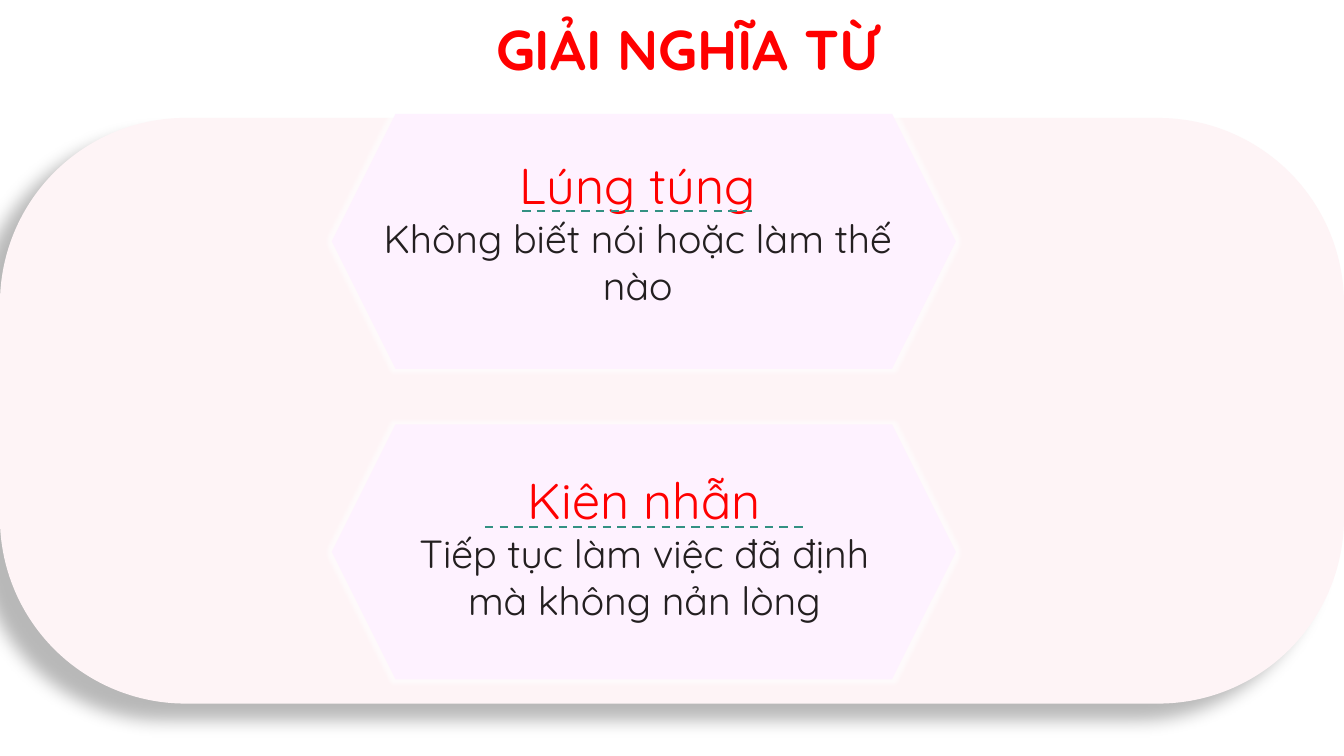
from dataclasses import dataclass

from lxml import etree
from pptx import Presentation
from pptx.dml.color import RGBColor
from pptx.enum import dml, shapes, text
from pptx.oxml.ns import qn
from pptx.util import Inches, Pt

COLORS = {
    "heading": "FF0000",
    "body": "231F20",
    "panel": "FEF4F6",
    "card": "FEF2FF",
    "rule": "339183",
    "shadow": "000000",
    "glow": "FFFFFF",
}
FONT = "Quicksand"
CARD_LEFT, CARD_WIDTH, CARD_HEIGHT = 3.29, 6.19, 2.53


@dataclass
class Definition:
    word: str
    meaning: str
    card_top: float
    text_box: tuple[float, float, float, float]
    rule_start: float
    rule_end: float
    rule_y: float


DEFINITIONS = [
    Definition("Lúng túng", "Không biết nói hoặc làm thế nào", 1.13,
               (3.67, 1.48, 5.31, 1.65), 5.18, 7.49, 2.09),
    Definition("Kiên nhẫn", "Tiếp tục làm việc đã định mà không nản lòng", 4.21,
               (3.88, 4.6, 5.02, 2.12), 4.81, 7.99, 5.23),
]


def rgb(name: str) -> RGBColor:
    return RGBColor.from_string(COLORS[name])


def write(paragraph, content: str, *, size: float, color: str,
          bold: bool = False, align=text.PP_ALIGN.CENTER) -> None:
    paragraph.alignment = align
    run = paragraph.add_run()
    run.text = content
    run.font.name = FONT
    run.font.size = Pt(size)
    run.font.bold = bold
    run.font.color.rgb = rgb(color)


def fit_frame(frame) -> None:
    frame.word_wrap = True
    frame.auto_size = text.MSO_AUTO_SIZE.SHAPE_TO_FIT_TEXT
    frame.vertical_anchor = text.MSO_ANCHOR.TOP


def add_effect(shape, kind: str, color: str, opacity: int, **attributes) -> None:
    """Put one effect, such as outerShdw or glow, in the shape's effect list."""
    shape.shadow.inherit = False
    effects = shape.element.spPr.find(qn("a:effectLst"))
    effect = etree.SubElement(effects, qn(f"a:{kind}"),
                              {key: str(value) for key, value in attributes.items()})
    tint = etree.SubElement(effect, qn("a:srgbClr"), val=COLORS[color])
    etree.SubElement(tint, qn("a:alpha"), val=str(opacity * 1000))


def add_filled(parent, preset, box: tuple[float, float, float, float], color: str):
    shape = parent.add_shape(preset, *map(Inches, box))
    shape.fill.solid()
    shape.fill.fore_color.rgb = rgb(color)
    shape.line.fill.background()
    return shape


def add_title(slide) -> None:
    title = slide.shapes.title
    title.left, title.top, title.width, title.height = map(Inches, (4.82, 0.09, 7.11, 0.77))
    fit_frame(title.text_frame)
    write(title.text_frame.paragraphs[0], "GIẢI NGHĨA TỪ", size=40,
          color="heading", bold=True, align=text.PP_ALIGN.LEFT)


def add_panel(slide) -> None:
    panel = add_filled(slide.shapes, shapes.MSO_SHAPE.ROUNDED_RECTANGLE,
                       (0, 1.17, 13.33, 5.81), "panel")
    panel.adjustments[0] = 0.317
    add_effect(panel, "outerShdw", "shadow", 28, blurRad=Pt(11.8), dist=Pt(19.7),
               dir=141 * 60000, algn="ctr", rotWithShape=0)


def add_definition(slide, definition: Definition) -> None:
    group = slide.shapes.add_group_shape().shapes
    card = add_filled(group, shapes.MSO_SHAPE.HEXAGON,
                      (CARD_LEFT, definition.card_top, CARD_WIDTH, CARD_HEIGHT), "card")
    add_effect(card, "glow", "glow", 60, rad=Pt(5))

    frame = group.add_textbox(*map(Inches, definition.text_box)).text_frame
    fit_frame(frame)
    write(frame.paragraphs[0], definition.word, size=36, color="heading")
    write(frame.add_paragraph(), definition.meaning, size=28, color="body")

    y = Inches(definition.rule_y)
    rule = group.add_connector(shapes.MSO_CONNECTOR.STRAIGHT,
                               Inches(definition.rule_start), y,
                               Inches(definition.rule_end), y)
    rule.line.color.rgb = rgb("rule")
    rule.line.width = Pt(1.5)
    rule.line.dash_style = dml.MSO_LINE.DASH
    etree.SubElement(rule.element.spPr, qn("a:effectLst"))


def main() -> None:
    deck = Presentation()
    deck.slide_width, deck.slide_height = Inches(13.33), Inches(7.5)
    slide = deck.slides.add_slide(deck.slide_layouts.get_by_name("Title Only"))
    add_title(slide)
    add_panel(slide)
    for definition in DEFINITIONS:
        add_definition(slide, definition)
    deck.save("out.pptx")


if __name__ == "__main__":
    main()
